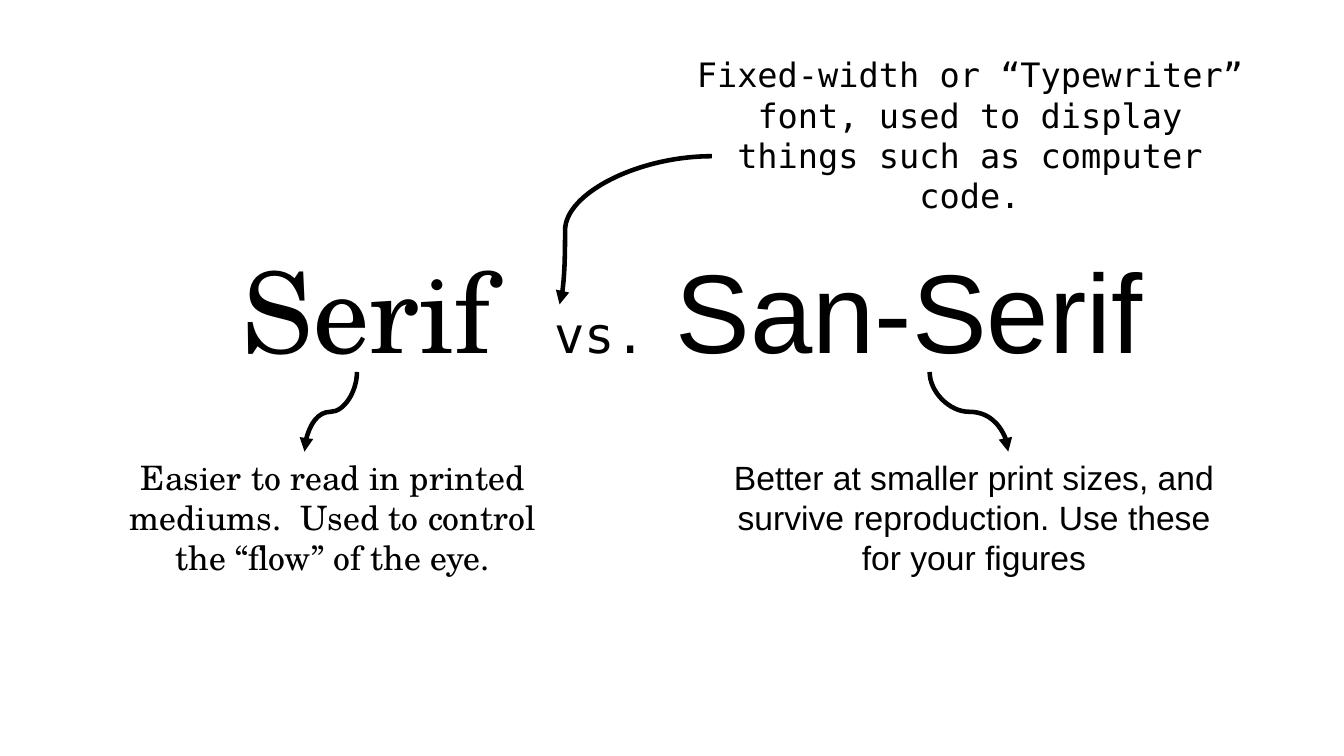
from dataclasses import dataclass

from lxml.etree import SubElement
from pptx import Presentation
from pptx.dml.color import RGBColor
from pptx.enum.shapes import MSO_CONNECTOR
from pptx.enum.text import MSO_ANCHOR, MSO_AUTO_SIZE, PP_ALIGN
from pptx.oxml.ns import qn
from pptx.shapes.connector import Connector
from pptx.shapes.shapetree import GroupShapes
from pptx.slide import Slide
from pptx.text.text import _Run as Run
from pptx.util import Inches, Pt


@dataclass(frozen=True)
class Theme:
    ink: RGBColor = RGBColor(0, 0, 0)
    serif: str = "TeX Gyre Schola"
    sans: str = "Arial"
    mono: str = "DejaVu Sans Mono"
    title_size: int = 80
    versus_size: int = 36
    note_size: int = 24
    arrow_width: float = 3.25


THEME = Theme()


@dataclass(frozen=True)
class Arrow:
    begin: tuple[float, float]
    end: tuple[float, float]
    leaves_vertically: bool = True
    bend: float = 0.5


@dataclass(frozen=True)
class Note:
    text: str
    font: str
    box: tuple[float, float, float, float]
    arrow: Arrow


TITLE_BOX = (2.31, 2.42, 9.26, 1.45)
TITLE_PARTS = (
    ("Serif  ", THEME.serif, THEME.title_size),
    ("vs. ", THEME.mono, THEME.versus_size),
    ("San-Serif", THEME.sans, THEME.title_size),
)
NOTES = (
    Note("Easier to read in printed mediums.  Used to control the “flow” of the eye.",
         THEME.serif, (1.05, 4.48, 4.5, 1.31), Arrow((3.54, 3.69), (3.02, 4.48))),
    Note("Better at smaller print sizes, and survive reproduction. Use these for your figures",
         THEME.sans, (7.06, 4.48, 5.2, 1.31), Arrow((9.22, 3.69), (10, 4.48))),
    Note("Fixed-width or “Typewriter” font, used to display things such as computer code.",
         THEME.mono, (6.78, 0.49, 5.68, 1.72),
         Arrow((7.06, 1.55), (5.55, 3.02), leaves_vertically=False, bend=0.964)),
)


def format_run(run: Run, font: str, size: float) -> None:
    run.font.name = font
    run.font.size = Pt(size)
    run.font.color.rgb = THEME.ink


def fill_title(slide: Slide) -> None:
    title = slide.shapes.title
    title.left, title.top, title.width, title.height = map(Inches, TITLE_BOX)
    frame = title.text_frame
    frame.word_wrap = True
    frame.auto_size = MSO_AUTO_SIZE.NONE
    frame.vertical_anchor = MSO_ANCHOR.MIDDLE
    paragraph = frame.paragraphs[0]
    paragraph.alignment = PP_ALIGN.LEFT
    paragraph.line_spacing = 0.9
    for text, font, size in TITLE_PARTS:
        run = paragraph.add_run()
        run.text = text
        format_run(run, font, size)


def add_curve(shapes: GroupShapes, arrow: Arrow) -> Connector:
    """Add a curved connector, turned a quarter when it leaves its start vertically."""
    (x1, y1), (x2, y2) = arrow.begin, arrow.end
    rotation = 0
    if arrow.leaves_vertically:
        center_x, center_y = (x1 + x2) / 2, (y1 + y2) / 2
        half_width, half_height = (y2 - y1) / 2, abs(x2 - x1) / 2
        rotation = 90 if x2 < x1 else 270
        side = 1 if x2 < x1 else -1
        x1, x2 = center_x - side * half_width, center_x + side * half_width
        y1, y2 = center_y - half_height, center_y + half_height
    connector = shapes.add_connector(MSO_CONNECTOR.CURVE, *map(Inches, (x1, y1, x2, y2)))
    if rotation:
        connector.element.spPr.find(qn("a:xfrm")).set("rot", str(rotation * 60000))
    return connector


def add_arrow(shapes: GroupShapes, arrow: Arrow) -> None:
    connector = add_curve(shapes, arrow)
    connector.line.color.rgb = THEME.ink
    connector.line.width = Pt(THEME.arrow_width)
    properties = connector.element.spPr
    SubElement(properties.find(qn("a:ln")), qn("a:tailEnd"), type="triangle")
    SubElement(properties, qn("a:effectLst"))
    adjustments = properties.find(qn("a:prstGeom")).find(qn("a:avLst"))
    SubElement(adjustments, qn("a:gd"), name="adj1", fmla=f"val {round(arrow.bend * 100000)}")


def add_note(slide: Slide, note: Note) -> None:
    shapes = slide.shapes.add_group_shape().shapes
    frame = shapes.add_textbox(*map(Inches, note.box)).text_frame
    frame.word_wrap = True
    frame.auto_size = MSO_AUTO_SIZE.SHAPE_TO_FIT_TEXT
    frame.text = note.text
    paragraph = frame.paragraphs[0]
    paragraph.alignment = PP_ALIGN.CENTER
    format_run(paragraph.runs[0], note.font, THEME.note_size)
    add_arrow(shapes, note.arrow)


def main() -> None:
    presentation = Presentation()
    presentation.slide_width = Inches(13.33)
    presentation.slide_height = Inches(7.5)
    title_only = presentation.slide_layouts.get_by_name("Title Only")
    slide = presentation.slides.add_slide(title_only)
    fill_title(slide)
    for note in NOTES:
        add_note(slide, note)
    presentation.save("out.pptx")


if __name__ == "__main__":
    main()
